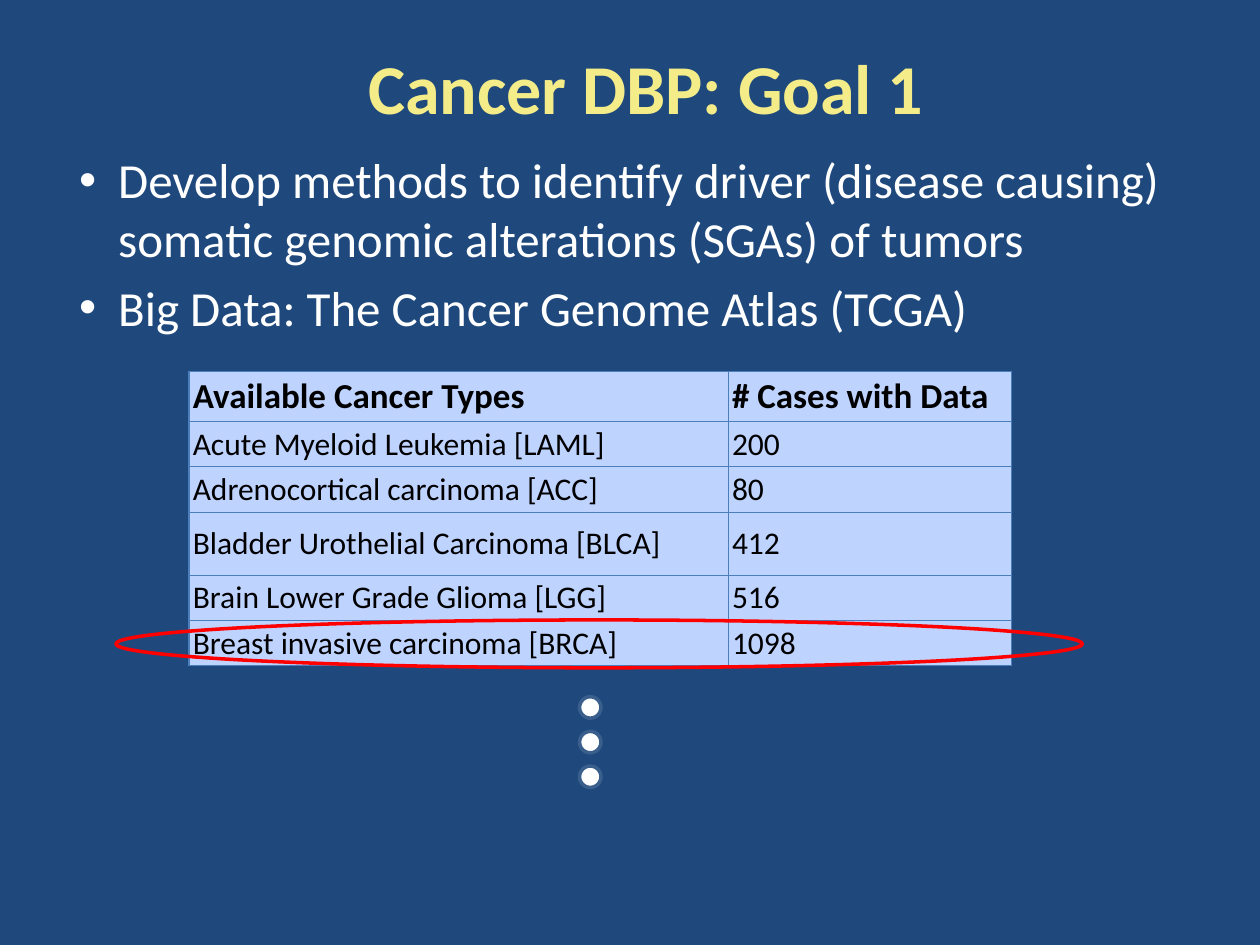
from dataclasses import dataclass

from lxml import etree
from pptx import Presentation
from pptx.dml.color import RGBColor
from pptx.enum.shapes import MSO_SHAPE
from pptx.enum.text import MSO_ANCHOR, PP_ALIGN
from pptx.oxml.ns import qn
from pptx.util import Inches, Pt

OVAL = MSO_SHAPE.OVAL
MIDDLE, TOP = MSO_ANCHOR.MIDDLE, MSO_ANCHOR.TOP
LEFT, CENTER = PP_ALIGN.LEFT, PP_ALIGN.CENTER


@dataclass(frozen=True)
class Theme:
    font: str = "Calibri"
    background: str = "1F497D"
    title: str = "F4EC88"
    body: str = "FFFFFF"
    cell_text: str = "000000"
    cell_fill: str = "BFD3FF"
    border: str = "4B7EBC"
    dot_line: str = "3A5F8C"
    highlight: str = "FF0000"
    title_size: int = 40
    body_size: int = 28
    header_size: int = 20
    cell_size: int = 18


THEME = Theme()

BULLETS = [
    "Develop methods to identify driver (disease causing) "
    "somatic genomic alterations (SGAs) of tumors",
    "Big Data: The Cancer Genome Atlas (TCGA)",
]
CASES = [
    ("Available Cancer Types", "# Cases with Data"),
    ("Acute Myeloid Leukemia [LAML]", "200"),
    ("Adrenocortical carcinoma [ACC]", "80"),
    ("Bladder Urothelial Carcinoma [BLCA]", "412"),
    ("Brain Lower Grade Glioma [LGG]", "516"),
    ("Breast invasive carcinoma [BRCA]", "1098"),
]
COLUMN_WIDTHS = [4.28, 2.25]
ROW_HEIGHTS = [0.38, 0.34, 0.34, 0.5, 0.34, 0.34]


def rgb(value):
    return RGBColor.from_string(value)


def write(p, text, *, size, color, bold=False, align=LEFT):
    p.alignment = align
    r = p.add_run()
    r.text = text
    r.font.name = THEME.font
    r.font.size = Pt(size)
    r.font.bold = bold
    r.font.color.rgb = rgb(color)


def add_text_frame(slide, box, anchor):
    tf = slide.shapes.add_textbox(*map(Inches, box)).text_frame
    tf.word_wrap = True
    tf.vertical_anchor = anchor
    return tf


def add_title(slide, box):
    tf = add_text_frame(slide, box, MIDDLE)
    write(tf.paragraphs[0], "Cancer DBP: Goal 1", size=THEME.title_size,
          color=THEME.title, bold=True, align=CENTER)


def set_bullet(p, margin, hanging):
    pPr = p._p.get_or_add_pPr()
    pPr.set("marL", str(Inches(margin)))
    pPr.set("indent", str(-Inches(hanging)))
    etree.SubElement(pPr, qn("a:buFont"), typeface="Arial")
    etree.SubElement(pPr, qn("a:buChar"), char="•")


def add_bullets(slide, box):
    tf = add_text_frame(slide, box, TOP)
    for i, text in enumerate(BULLETS):
        p = tf.add_paragraph() if i else tf.paragraphs[0]
        write(p, text, size=THEME.body_size, color=THEME.body)
        p.space_before = Pt(0.2 * THEME.body_size)
        set_bullet(p, 0.81, 0.31)


def set_borders(cell):
    """Line all four sides; must run before the cell gets its fill."""
    tcPr = cell._tc.get_or_add_tcPr()
    for side in ("a:lnL", "a:lnR", "a:lnT", "a:lnB"):
        ln = etree.SubElement(tcPr, qn(side), w=str(Pt(0.75)))
        fill = etree.SubElement(ln, qn("a:solidFill"))
        etree.SubElement(fill, qn("a:srgbClr"), val=THEME.border)


def add_case_table(slide, box):
    table = slide.shapes.add_table(len(CASES), len(COLUMN_WIDTHS),
                                   *map(Inches, box)).table
    for column, width in zip(table.columns, COLUMN_WIDTHS):
        column.width = Inches(width)
    for i, (row, height) in enumerate(zip(table.rows, ROW_HEIGHTS)):
        row.height = Inches(height)
        header = i == 0
        for cell, text in zip(row.cells, CASES[i]):
            set_borders(cell)
            cell.fill.solid()
            cell.fill.fore_color.rgb = rgb(THEME.cell_fill)
            cell.vertical_anchor = MIDDLE
            cell.margin_left = cell.margin_right = Inches(0.03)
            cell.margin_top = cell.margin_bottom = Inches(0.03)
            write(cell.text_frame.paragraphs[0], text, bold=header,
                  size=THEME.header_size if header else THEME.cell_size,
                  color=THEME.cell_text)


def add_oval(slide, box, line, fill=None):
    sp = slide.shapes.add_shape(OVAL, *map(Inches, box))
    sp.shadow.inherit = False
    if fill:
        sp.fill.solid()
        sp.fill.fore_color.rgb = rgb(fill)
    else:
        sp.fill.background()
    sp.line.color.rgb = rgb(line)
    sp.line.width = Pt(2)


def add_ellipsis(slide, box):
    """Stack three dots evenly from the top to the bottom of the box."""
    left, top, size, height = box
    step = (height - size) / 2
    for i in range(3):
        add_oval(slide, (left, top + i * step, size, size),
                 THEME.dot_line, THEME.body)


def main():
    prs = Presentation()
    prs.slide_width, prs.slide_height = Inches(10), Inches(7.5)
    slide = prs.slides.add_slide(prs.slide_layouts[6])
    slide.background.fill.solid()
    slide.background.fill.fore_color.rgb = rgb(THEME.background)

    add_title(slide, (0.5, 0.06, 9.25, 1.25))
    add_bullets(slide, (0.03, 1.14, 9.72, 3))
    add_case_table(slide, (1.5, 2.95, sum(COLUMN_WIDTHS), sum(ROW_HEIGHTS)))
    add_ellipsis(slide, (4.6, 5.53, 0.17, 0.72))
    add_oval(slide, (0.92, 4.92, 7.67, 0.38), THEME.highlight)
    prs.save("out.pptx")


if __name__ == "__main__":
    main()
